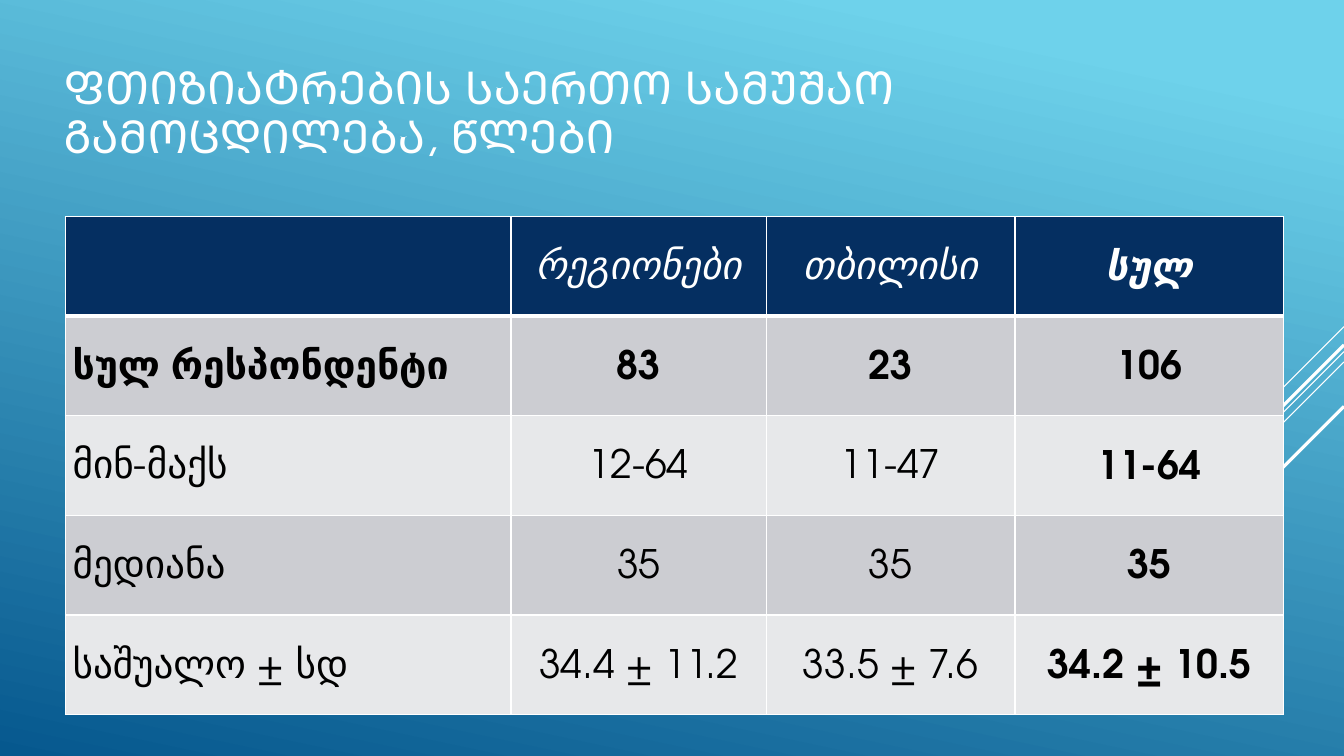
import dataclasses
import typing

import lxml.etree
import pptx
import pptx.dml.color
import pptx.enum.shapes
import pptx.enum.text
import pptx.oxml.ns
import pptx.util

Cm = pptx.util.Cm
Pt = pptx.util.Pt
RGBColor = pptx.dml.color.RGBColor
qn = pptx.oxml.ns.qn


@dataclasses.dataclass(frozen=True)
class Theme:
    font: str = "TeX Gyre Adventor"
    title_size: float = 32.4
    table_size: float = 28
    sky: str = "6ED2EB"
    ocean: str = "06588E"
    navy: str = "052F61"
    band_dark: str = "CCCDD2"
    band_light: str = "E7E8EA"
    white: str = "FFFFFF"
    black: str = "000000"


@dataclasses.dataclass(frozen=True)
class Ray:
    top: float
    length: float
    weight: float


@dataclasses.dataclass(frozen=True)
class Row:
    texts: tuple[str, ...]
    fill: str
    color: str
    bold: tuple[bool, ...]
    italic: bool = False
    bottom_border: float = 1


THEME = Theme()
SLIDE_WIDTH = 33.87
SLIDE_HEIGHT = 19.05
ROW_HEIGHT = 2.51
COLUMN_WIDTHS = (11.23, 6.43, 6.27, 6.76)
LAST_BOLD = (False, False, False, True)
ALL_BOLD = (True,) * 4

RAYS = (
    Ray(8.23, 2.54, 0.75),
    Ray(8.86, 8.28, 0.75),
    Ray(9.12, 5.27, 0.75),
    Ray(8.69, 4.85, 2.25),
    Ray(10.24, 3.53, 2.25),
)

ROWS = (
    Row(("", "რეგიონები", "თბილისი", "სულ"), THEME.navy, THEME.white, LAST_BOLD, True, 3),
    Row(("სულ რესპონდენტი", "83", "23", "106"), THEME.band_dark, THEME.black, ALL_BOLD),
    Row(("მინ-მაქს", "12-64", "11-47", "11-64"), THEME.band_light, THEME.black, LAST_BOLD),
    Row(("მედიანა", "35", "35", "35"), THEME.band_dark, THEME.black, LAST_BOLD),
    Row(("საშუალო ± სდ", "34.4 ± 11.2", "33.5 ± 7.6", "34.2 ± 10.5"),
        THEME.band_light, THEME.black, LAST_BOLD),
)


def add_run(paragraph: typing.Any, text: str, size: float, color: str,
            bold: bool = False, italic: bool = False) -> None:
    run = paragraph.add_run()
    run.text = text
    run.font.name = THEME.font
    run.font.size = Pt(size)
    run.font.bold = bold
    run.font.italic = italic
    run.font.color.rgb = RGBColor.from_string(color)


def paint_background(slide: typing.Any) -> None:
    fill = slide.background.fill
    fill.gradient()
    fill.gradient_angle = 258
    for stop, position, color in zip(fill.gradient_stops, (0.1, 1), (THEME.sky, THEME.ocean)):
        stop.position = position
        stop.color.rgb = RGBColor.from_string(color)


def draw_ray(slide: typing.Any, ray: Ray) -> None:
    connector = slide.shapes.add_connector(
        pptx.enum.shapes.MSO_CONNECTOR.STRAIGHT,
        Cm(SLIDE_WIDTH), Cm(ray.top),
        Cm(SLIDE_WIDTH - ray.length), Cm(ray.top + ray.length),
    )
    connector.line.color.rgb = RGBColor.from_string(THEME.white)
    connector.line.width = Pt(ray.weight)
    lxml.etree.SubElement(connector._element.spPr, qn("a:effectLst"))


def write_title(slide: typing.Any, text: str) -> None:
    title = slide.shapes.title
    title.left, title.top, title.width, title.height = Cm(1.35), Cm(1.32), Cm(29.08), Cm(3.12)
    frame = title.text_frame
    frame.word_wrap = True
    frame.auto_size = pptx.enum.text.MSO_AUTO_SIZE.NONE
    frame.vertical_anchor = pptx.enum.text.MSO_ANCHOR.MIDDLE
    paragraph = frame.paragraphs[0]
    paragraph.alignment = pptx.enum.text.PP_ALIGN.LEFT
    paragraph.line_spacing = 0.9
    add_run(paragraph, text, THEME.title_size, THEME.white)


def set_borders(cell: typing.Any, top: float, bottom: float) -> None:
    properties = cell._tc.get_or_add_tcPr()
    weights = {"a:lnL": 1, "a:lnR": 1, "a:lnT": top, "a:lnB": bottom}
    for index, (tag, weight) in enumerate(weights.items()):
        border = lxml.etree.Element(qn(tag), w=str(Pt(weight)))
        fill = lxml.etree.SubElement(border, qn("a:solidFill"))
        lxml.etree.SubElement(fill, qn("a:srgbClr"), val=THEME.white)
        properties.insert(index, border)


def write_cell(cell: typing.Any, row: Row, column: int, top_border: float) -> None:
    align = pptx.enum.text.PP_ALIGN
    cell.fill.solid()
    cell.fill.fore_color.rgb = RGBColor.from_string(row.fill)
    cell.vertical_anchor = pptx.enum.text.MSO_ANCHOR.MIDDLE
    cell.margin_left = cell.margin_right = Cm(0.18)
    cell.margin_top = cell.margin_bottom = Cm(0)
    set_borders(cell, top_border, row.bottom_border)
    if row.texts[column]:
        paragraph = cell.text_frame.paragraphs[0]
        paragraph.alignment = align.CENTER if column else align.LEFT
        paragraph.line_spacing = 1.15
        add_run(paragraph, row.texts[column], THEME.table_size, row.color,
                row.bold[column], row.italic)


def draw_table(slide: typing.Any) -> None:
    table = slide.shapes.add_table(
        len(ROWS), len(COLUMN_WIDTHS), Cm(1.65), Cm(5.46),
        Cm(sum(COLUMN_WIDTHS)), Cm(ROW_HEIGHT * len(ROWS)),
    ).table
    for column, width in zip(table.columns, COLUMN_WIDTHS):
        column.width = Cm(width)
    top_border = 1.0
    for table_row, row in zip(table.rows, ROWS):
        table_row.height = Cm(ROW_HEIGHT)
        for column, cell in enumerate(table_row.cells):
            write_cell(cell, row, column, top_border)
        top_border = row.bottom_border


def main() -> None:
    presentation = pptx.Presentation()
    presentation.slide_width = Cm(SLIDE_WIDTH)
    presentation.slide_height = Cm(SLIDE_HEIGHT)
    slide = presentation.slides.add_slide(presentation.slide_layouts[5])
    paint_background(slide)
    for ray in RAYS:
        draw_ray(slide, ray)
    write_title(slide, "ᲤᲗᲘᲖᲘᲐᲢᲠᲔᲑᲘᲡ ᲡᲐᲔᲠᲗᲝ ᲡᲐᲛᲣᲨᲐᲝ ᲒᲐᲛᲝᲪᲓᲘᲚᲔᲑᲐ, ᲬᲚᲔᲑᲘ")
    draw_table(slide)
    presentation.save("out.pptx")


if __name__ == "__main__":
    main()
